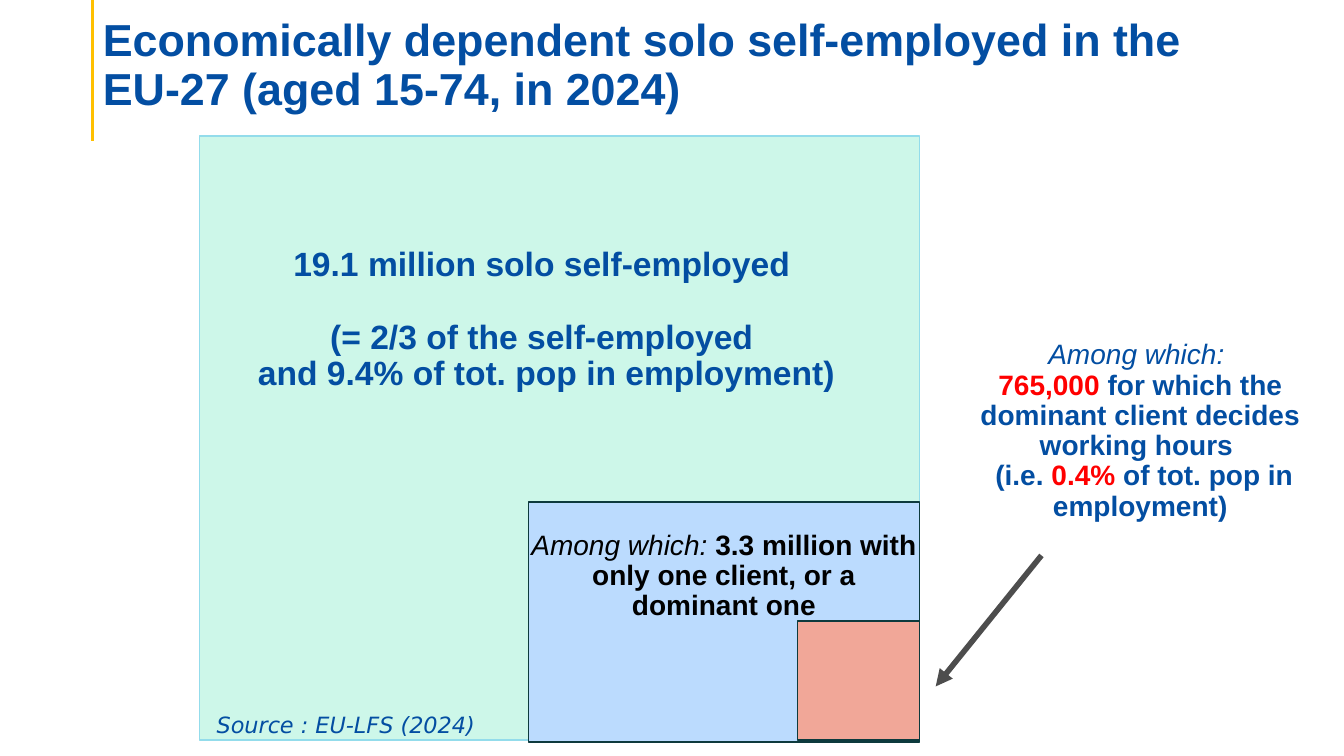
import pptx
import pptx.dml.color
import pptx.enum.shapes
import pptx.enum.text
import pptx.oxml
import pptx.oxml.ns
import pptx.util

COLORS = {
    "navy": "034EA2",
    "gold": "FFC000",
    "mint": "CDF7E9",
    "aqua": "93DCEB",
    "sky": "BBDBFE",
    "teal": "0D3A3D",
    "salmon": "F1A798",
    "red": "FF0000",
    "black": "000000",
    "gray": "4D4D4D",
}
WIDTH = pptx.util.Inches(13.33)
HEIGHT = pptx.util.Inches(7.5)
CENTER = pptx.enum.text.PP_ALIGN.CENTER
LEFT = pptx.enum.text.PP_ALIGN.LEFT


def rgb(name):
    return pptx.dml.color.RGBColor.from_string(COLORS[name])


def across(percent):
    return round(WIDTH * percent / 100)


def down(percent):
    return round(HEIGHT * percent / 100)


def area(left, top, width, height):
    return across(left), down(top), across(width), down(height)


def format_font(font, size, color, face="Arial", bold=False, italic=False):
    font.size = pptx.util.Pt(size)
    font.color.rgb = rgb(color)
    font.name = face
    font.bold = bold
    font.italic = italic


def format_frame(frame):
    frame.word_wrap = True
    frame.auto_size = pptx.enum.text.MSO_AUTO_SIZE.NONE
    frame.vertical_anchor = pptx.enum.text.MSO_ANCHOR.BOTTOM
    frame.margin_left = frame.margin_right = pptx.util.Inches(0.1)
    frame.margin_top = pptx.util.Inches(0.05)
    frame.margin_bottom = 0


def format_paragraph(paragraph, align, gap=0):
    paragraph.alignment = align
    paragraph.line_spacing = 0.9
    paragraph.space_before = pptx.util.Pt(gap)
    paragraph.space_after = pptx.util.Pt(0)


def add_title(slide, wording):
    title = slide.shapes.title
    title.left, title.top, title.width, title.height = area(6.9, 3.73, 86.27, 11.47)
    format_frame(title.text_frame)
    title.text_frame.text = wording
    heading = title.text_frame.paragraphs[0]
    format_paragraph(heading, LEFT)
    format_font(heading.font, 32, "navy", bold=True)


def add_label(slide, place, paragraphs, size, align=CENTER, face="Arial", gaps=None):
    frame = slide.shapes.add_textbox(*area(*place)).text_frame
    format_frame(frame)
    for index, parts in enumerate(paragraphs):
        paragraph = frame.add_paragraph() if index else frame.paragraphs[0]
        format_paragraph(paragraph, align, (gaps or {}).get(index, 0))
        styles = {(color, style) for _, color, style in parts}
        for wording, color, style in parts:
            run = paragraph.add_run()
            run.text = wording
            target = paragraph.font if len(styles) == 1 else run.font
            format_font(target, size, color, face, style == "bold", style == "italic")


def add_group_square(slide, right, bottom, width, height, fill, outline):
    square = slide.shapes.add_shape(
        pptx.enum.shapes.MSO_SHAPE.RECTANGLE,
        *area(right - width, bottom - height, width, height))
    square.shadow.inherit = False
    square.fill.solid()
    square.fill.fore_color.rgb = rgb(fill)
    square.line.color.rgb = rgb(outline)
    square.line.width = pptx.util.Pt(1)


def add_line(slide, start, end, color, weight, arrow=False):
    line = slide.shapes.add_connector(
        pptx.enum.shapes.MSO_CONNECTOR.STRAIGHT,
        across(start[0]), down(start[1]), across(end[0]), down(end[1]))
    line.line.color.rgb = rgb(color)
    line.line.width = pptx.util.Pt(weight)
    if arrow:
        head = pptx.oxml.parse_xml(
            f'<a:tailEnd {pptx.oxml.ns.nsdecls("a")} type="triangle"/>')
        line.line._get_or_add_ln().append(head)
    properties = line._element.spPr
    properties.append(pptx.oxml.parse_xml(
        f'<a:effectLst {pptx.oxml.ns.nsdecls("a")}/>'))


def main():
    deck = pptx.Presentation()
    deck.slide_width, deck.slide_height = WIDTH, HEIGHT
    slide = deck.slides.add_slide(deck.slide_layouts[5])

    add_line(slide, (6.9, 0), (6.9, 18.67), "gold", 2.25)
    add_title(slide, "Economically dependent solo self-employed in the "
                     "EU-27 (aged 15-74, in 2024)")

    add_group_square(slide, 68.42, 97.87, 53.56, 79.87, "mint", "aqua")
    add_label(slide, (16.35, 29.47, 48.61, 22.53), [
        [("19.1 million solo self-employed ", "navy", "bold")],
        [("(= 2/3 of the self-employed ", "navy", "bold")],
        [("and 9.4% of tot. pop in employment)", "navy", "bold")],
    ], 24, gaps={1: 26})

    add_group_square(slide, 68.42, 98.13, 29.11, 31.73, "sky", "teal")
    add_label(slide, (38.71, 63.6, 30.31, 18.67), [
        [("Among which: ", "black", "italic"),
         ("3.3 million with only one client, or a dominant one", "black", "bold")],
    ], 20)

    add_group_square(slide, 68.42, 97.87, 9.08, 15.73, "salmon", "teal")
    add_label(slide, (69.69, 50.4, 30.31, 18.67), [
        [("Among which: ", "navy", "italic")],
        [("765,000", "red", "bold"),
         (" for which the dominant client decides working hours ", "navy", "bold")],
        [(" (i.e. ", "navy", "bold"), ("0.4%", "red", "bold"),
         (" of tot. pop in employment)", "navy", "bold")],
    ], 20)
    add_line(slide, (77.49, 73.47), (69.62, 90.8), "gray", 4, arrow=True)

    add_label(slide, (15.38, 86.13, 69.24, 11.47), [
        [("Source : EU-LFS (2024)", "navy", "italic")],
    ], 16, align=LEFT, face="DejaVu Sans")

    deck.save("out.pptx")


if __name__ == "__main__":
    main()
